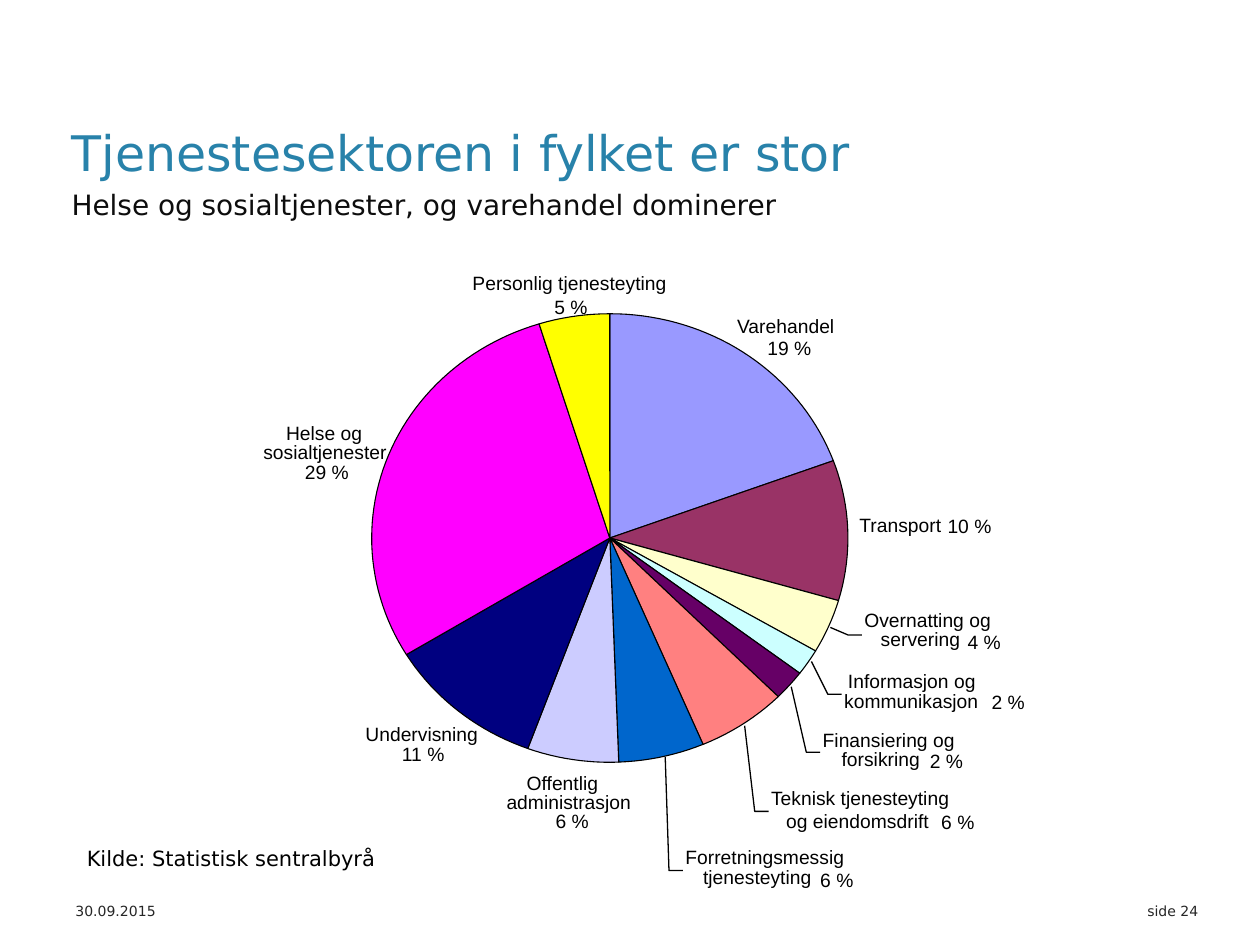
import math

from pptx import Presentation
from pptx.dml.color import RGBColor
from pptx.enum import text as t
from pptx.util import Inches, Pt

BLACK = RGBColor(0x00, 0x00, 0x00)
TITLE_BLUE = RGBColor(0x28, 0x82, 0xAA)
SUBTITLE_BLACK = RGBColor(0x0D, 0x0D, 0x0D)
FOOTER_GREY = RGBColor(0x26, 0x26, 0x26)

# Pie: share in percent and colour, clockwise from the top
SECTORS = [
    (19.4, RGBColor(0x99, 0x99, 0xFF)),  # Varehandel
    (10.1, RGBColor(0x99, 0x33, 0x66)),  # Transport
    (3.9, RGBColor(0xFF, 0xFF, 0xCC)),   # Overnatting og servering
    (1.9, RGBColor(0xCC, 0xFF, 0xFF)),   # Informasjon og kommunikasjon
    (2.2, RGBColor(0x66, 0x00, 0x66)),   # Finansiering og forsikring
    (6.1, RGBColor(0xFF, 0x80, 0x80)),   # Teknisk tjenesteyting
    (5.8, RGBColor(0x00, 0x66, 0xCC)),   # Forretningsmessig tjenesteyting
    (6.2, RGBColor(0xCC, 0xCC, 0xFF)),   # Offentlig administrasjon
    (10.7, RGBColor(0x00, 0x00, 0x80)),  # Undervisning
    (28.9, RGBColor(0xFF, 0x00, 0xFF)),  # Helse og sosialtjenester
    (4.8, RGBColor(0xFF, 0xFF, 0x00)),   # Personlig tjenesteyting
]
CENTRE_X, CENTRE_Y = 4.84, 4.27
RADIUS_X, RADIUS_Y = 1.89, 1.78

# Leader lines: label end and pie end
LEADERS = [
    ((6.84, 5.04), (6.59, 4.98)),
    ((6.68, 5.51), (6.44, 5.25)),
    ((6.51, 5.97), (6.28, 5.45)),
    ((6.10, 6.44), (5.91, 5.76)),
    ((5.42, 6.91), (5.28, 6.01)),
]
LEADER_FOOT = 0.11

# Label lines: text, left, top, width
LABELS = [
    ("Varehandel", 5.85, 2.49, 0.83), ("19 %", 6.09, 2.67, 0.37),
    ("Transport", 6.82, 4.07, 0.69), ("10 %", 7.52, 4.08, 0.48),
    ("Overnatting og", 6.86, 4.83, 1.11), ("servering", 6.99, 4.98, 0.67),
    ("4 %", 7.68, 5.0, 0.28),
    ("Informasjon og", 6.73, 5.31, 1.12), ("kommunikasjon", 6.7, 5.47, 1.13),
    ("2 %", 7.87, 5.48, 0.28),
    ("Finansiering og", 6.53, 5.78, 1.16), ("forsikring", 6.68, 5.93, 0.66),
    ("2 %", 7.38, 5.95, 0.28),
    ("Teknisk tjenesteyting", 6.12, 6.24, 1.56),
    ("og eiendomsdrift", 6.24, 6.42, 1.2), ("6 %", 7.47, 6.43, 0.28),
    ("Forretningsmessig", 5.44, 6.71, 1.37),
    ("tjenesteyting", 5.58, 6.87, 0.91), ("6 %", 6.51, 6.89, 0.28),
    ("Offentlig", 4.18, 6.12, 0.65), ("administrasjon", 4.02, 6.27, 1.05),
    ("6 %", 4.41, 6.42, 0.28),
    ("Undervisning", 2.9, 5.73, 0.95), ("11 %", 3.19, 5.89, 0.37),
    ("Helse og", 2.27, 3.34, 0.69), ("sosialtjenester", 2.09, 3.49, 1.04),
    ("29 %", 2.42, 3.65, 0.37),
    ("Personlig tjenesteyting", 3.75, 2.15, 1.63), ("5 %", 4.4, 2.34, 0.28),
]
LABEL_HEIGHT = 0.18


def add_text(shapes, text, left, top, width, height, size, color=BLACK,
             font="DejaVu Sans", align=t.PP_ALIGN.LEFT, wrap=True, margin=None):
    """Add a one-paragraph text box; boxes that do not wrap fit their text."""
    box = shapes.add_textbox(*map(Inches, (left, top, width, height)))
    frame = box.text_frame
    frame.word_wrap = wrap
    if not wrap:
        frame.auto_size = t.MSO_AUTO_SIZE.SHAPE_TO_FIT_TEXT
    if margin is not None:
        frame.margin_left = frame.margin_right = Inches(margin)
        frame.margin_top = frame.margin_bottom = Inches(margin)
    paragraph = frame.paragraphs[0]
    paragraph.alignment = align
    run = paragraph.add_run()
    run.text = text
    run.font.name = font
    run.font.size = Pt(size)
    run.font.color.rgb = color


def add_outline(shapes, points, line_width, fill=None):
    """Draw a closed filled outline, or an open line when there is no fill."""
    corners = [(Inches(x), Inches(y)) for x, y in points]
    builder = shapes.build_freeform(*corners[0])
    builder.add_line_segments(corners[1:], close=fill is not None)
    shape = builder.convert_to_shape()
    shape.shadow.inherit = False
    if fill is None:
        shape.fill.background()
    else:
        shape.fill.solid()
        shape.fill.fore_color.rgb = fill
    shape.line.color.rgb = BLACK
    shape.line.width = Pt(line_width)


def sector_points(start, share):
    """Centre point followed by points on the rim, about two degrees apart."""
    steps = math.ceil(share * 1.8)
    points = [(CENTRE_X, CENTRE_Y)]
    for step in range(steps + 1):
        angle = 2 * math.pi * (start + share * step / steps) / 100
        points.append((CENTRE_X + RADIUS_X * math.sin(angle),
                       CENTRE_Y - RADIUS_Y * math.cos(angle)))
    return points


def main():
    presentation = Presentation()
    presentation.slide_width = Inches(10)
    presentation.slide_height = Inches(7.5)
    slide = presentation.slides.add_slide(presentation.slide_layouts[6])
    shapes = slide.shapes

    # Footer
    add_text(shapes, "30.09.2015", 0.5, 7.11, 2.36, 0.39, 8, FOOTER_GREY)
    add_text(shapes, "side 24", 7.17, 7.11, 2.44, 0.39, 8, FOOTER_GREY,
             align=t.PP_ALIGN.RIGHT)

    # Headings and data source
    add_text(shapes, "Tjenestesektoren i fylket er stor",
             0.47, 0.92, 9.21, 0.55, 28, TITLE_BLUE)
    add_text(shapes, "Helse og sosialtjenester, og varehandel dominerer",
             0.47, 1.44, 9.21, 0.55, 16, SUBTITLE_BLACK)
    add_text(shapes, "Kilde: Statistisk sentralbyrå",
             0.59, 6.66, 2.55, 0.3, 12, wrap=False)

    # Elliptical pie with leader lines and labels, as one group
    pie = shapes.add_group_shape().shapes
    start = 0
    for share, color in SECTORS:
        add_outline(pie, sector_points(start, share), 0.63, color)
        start += share
    for (x, y), rim in LEADERS:
        add_outline(pie, [(x, y), (x - LEADER_FOOT, y), rim], 0)
    for text, left, top, width in LABELS:
        add_text(pie, text, left, top, width, LABEL_HEIGHT, 11,
                 font="Arial", wrap=False, margin=0)

    presentation.save("out.pptx")


if __name__ == "__main__":
    main()
